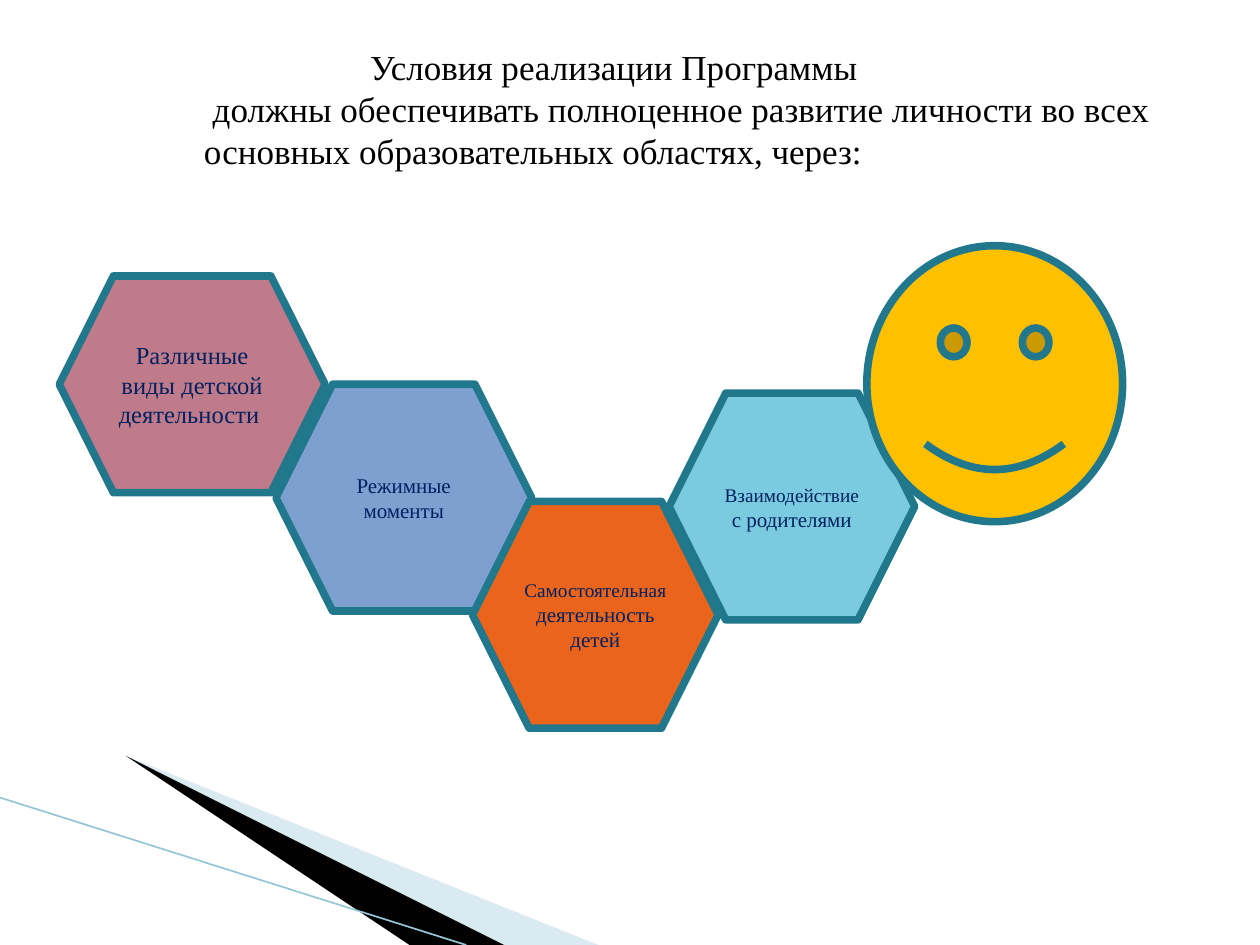
from lxml import etree
from pptx import Presentation
from pptx.dml.color import RGBColor
from pptx.enum import shapes, text
from pptx.oxml.ns import qn
from pptx.util import Inches, Pt

BLACK = RGBColor(0x00, 0x00, 0x00)
NAVY = RGBColor(0x00, 0x20, 0x60)
TEAL = RGBColor(0x21, 0x78, 0x8D)
PALE_BLUE = RGBColor(0xA0, 0xCB, 0xDC)
LIGHT_BLUE = RGBColor(0x97, 0xC5, 0xD8)
ROSE = RGBColor(0xC0, 0x7B, 0x8A)
BLUE = RGBColor(0x7D, 0xA0, 0xD0)
ORANGE = RGBColor(0xEB, 0x64, 0x1B)
AQUA = RGBColor(0x7A, 0xCB, 0xE0)
YELLOW = RGBColor(0xFF, 0xC0, 0x00)

FONT = "Times New Roman"

TITLE_LINES = [
    ("Условия реализации Программы", 2.29),
    ("должны обеспечивать полноценное развитие личности во всех", 1.04),
    ("основных образовательных областях, через:", 0.97),
]

# Box relative to the chain, fill, runs as (text, size)
HEXAGONS = [
    ((0, 0.24, 2.11, 1.72), ROSE, [("Различные виды детской деятельности ", 14)]),
    ((1.72, 1.1, 2.03, 1.8), BLUE, [("Режимные моменты", 12)]),
    ((3.28, 2.03, 1.95, 1.8), ORANGE,
     [("Самостоятельная ", 11), ("деятельность детей", 12)]),
    ((4.84, 1.17, 1.95, 1.8), AQUA,
     [("Взаимодействие", 11), (" с родителями", 12)]),
]
SMILEY_BOX = (6.41, 0, 2.03, 2.19)


def set_values(target, values):
    for name, value in values.items():
        setattr(target, name, value)


def add_run(paragraph, words, size, color):
    run = paragraph.add_run()
    run.text = words
    set_values(run.font, {"name": FONT, "size": Pt(size)})
    run.font.color.rgb = color


def add_wedge(slide, left, top, points, color, opacity=None):
    corners = [(left + x, top + y) for x, y in points]
    builder = slide.shapes.build_freeform(*corners[0], scale=Inches(1))
    builder.add_line_segments(corners[1:], close=True)
    shape = builder.convert_to_shape()
    shape.shadow.inherit = False
    shape.fill.solid()
    shape.fill.fore_color.rgb = color
    shape.line.fill.background()
    if opacity is not None:
        fill_color = shape.fill._xPr.find(".//" + qn("a:srgbClr"))
        etree.SubElement(fill_color, qn("a:alpha"), val=str(opacity * 1000))


def add_corner_decoration(slide, left, top, width, height):
    add_wedge(slide, left, top, [(0.55, 0.17), (width, height), (4.56, height)],
              PALE_BLUE, opacity=40)
    add_wedge(slide, left, top, [(0.53, 0.16), (4.55, height), (3.68, height)], BLACK)
    edge = slide.shapes.add_connector(
        shapes.MSO_CONNECTOR.STRAIGHT, Inches(left), Inches(top),
        Inches(left + 3.7), Inches(top + height))
    edge.line.color.rgb = LIGHT_BLUE
    edge.line.width = Pt(0.95)
    etree.SubElement(edge._element.spPr, qn("a:effectLst"))


def add_title(slide, *box):
    frame = slide.shapes.add_textbox(*map(Inches, box)).text_frame
    frame.word_wrap = True
    for index, (words, indent) in enumerate(TITLE_LINES):
        paragraph = frame.add_paragraph() if index else frame.paragraphs[0]
        paragraph._p.get_or_add_pPr().set("marL", str(Inches(indent)))
        add_run(paragraph, words, 20, BLACK)


def add_outlined_shape(slide, kind, box, color):
    shape = slide.shapes.add_shape(kind, *map(Inches, box))
    shape.shadow.inherit = False
    shape.fill.solid()
    shape.fill.fore_color.rgb = color
    shape.line.color.rgb = TEAL
    shape.line.width = Pt(4.33)
    return shape


def add_chain(slide, left, top):
    """Hexagons from left to right, ending with the smiley face."""
    def placed(box):
        return left + box[0], top + box[1], box[2], box[3]

    for box, color, runs in HEXAGONS:
        frame = add_outlined_shape(
            slide, shapes.MSO_SHAPE.HEXAGON, placed(box), color).text_frame
        set_values(frame, {"word_wrap": True,
                           "vertical_anchor": text.MSO_ANCHOR.MIDDLE})
        paragraph = frame.paragraphs[0]
        paragraph.alignment = text.PP_ALIGN.CENTER
        for words, size in runs:
            add_run(paragraph, words, size, NAVY)
    add_outlined_shape(slide, shapes.MSO_SHAPE.SMILEY_FACE, placed(SMILEY_BOX), YELLOW)


def main():
    presentation = Presentation()
    set_values(presentation, {"slide_width": Inches(10), "slide_height": Inches(7.5)})
    slide = presentation.slides.add_slide(presentation.slide_layouts[6])
    add_corner_decoration(slide, 0, 6.33, 5.9, 1.17)
    add_title(slide, 0.55, 0.31, 9.06, 1.11)
    add_chain(slide, 0.47, 1.95)
    presentation.save("out.pptx")


if __name__ == "__main__":
    main()
